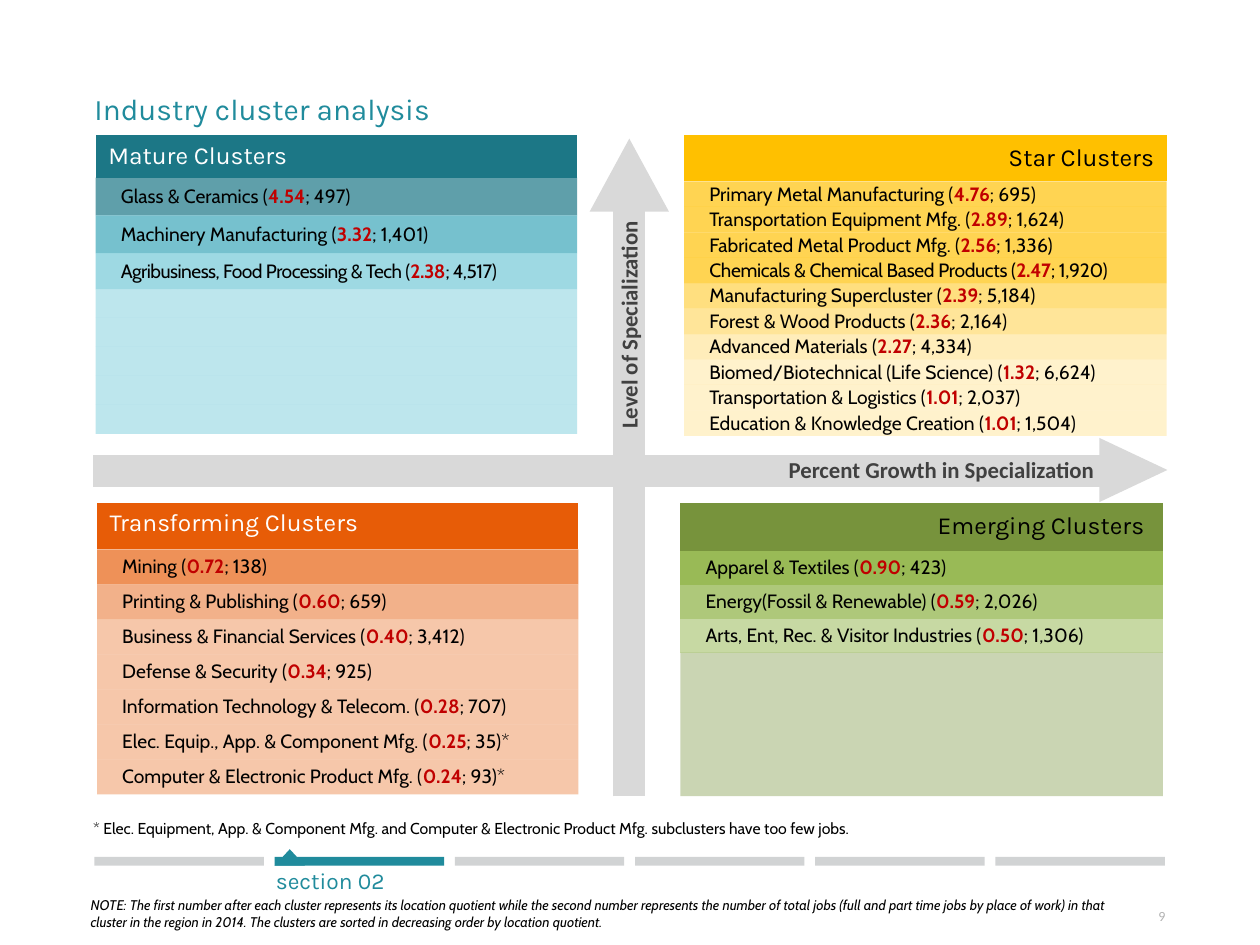
from lxml.etree import SubElement
from pptx import Presentation
from pptx.dml.color import RGBColor
from pptx.enum.shapes import MSO_CONNECTOR as Connector, MSO_SHAPE as Shape
from pptx.enum.text import MSO_ANCHOR as Anchor, PP_ALIGN as Align
from pptx.oxml.ns import qn
from pptx.util import Inches, Pt

BLACK = RGBColor(0x00, 0x00, 0x00)
WHITE = RGBColor(0xFF, 0xFF, 0xFF)
RED = RGBColor(0xC0, 0x00, 0x00)
TEAL = RGBColor(0x20, 0x8B, 0x9C)
DEEP_TEAL = RGBColor(0x1C, 0x77, 0x86)
MID_TEAL = RGBColor(0x3C, 0xA8, 0xBA)
SOFT_TEAL = RGBColor(0x76, 0xCA, 0xD8)
PALE_TEAL = RGBColor(0xA2, 0xDC, 0xE6)
GOLD = RGBColor(0xFF, 0xC0, 0x00)
ORANGE = RGBColor(0xE7, 0x5C, 0x07)
SOFT_ORANGE = RGBColor(0xED, 0x8C, 0x51)
OLIVE = RGBColor(0x77, 0x93, 0x3C)
GREEN = RGBColor(0x99, 0xBA, 0x56)
MID_GREEN = RGBColor(0xAE, 0xC8, 0x7A)
PALE_GREEN = RGBColor(0xC7, 0xD9, 0xA3)
AXIS_GRAY = RGBColor(0xD9, 0xD9, 0xD9)
BAR_GRAY = RGBColor(0xD1, 0xD3, 0xD4)
LABEL_GRAY = RGBColor(0x40, 0x40, 0x40)
NUMBER_GRAY = RGBColor(0xB2, 0xB2, 0xB2)

NO_GRID_STYLE = "{2D5ABB26-0587-4C30-8999-92F81FD0307C}"

# Clusters: name, location quotient, jobs, letter spacing in points.
# Fills: colour, opacity in percent. Heights: header first, then each row.
QUADRANTS = [
    {"title": "Mature Clusters", "at": (0.76, 1.07), "width": 3.82,
     "title_color": WHITE, "title_fill": DEEP_TEAL, "align": Align.LEFT,
     "pad": 0.05, "right": 0.1,
     "heights": [0.34, 0.3, 0.3, 0.28] + [0.23] * 5,
     "clusters": [
         ("Glass & Ceramics", "4.54", "; 497)", 0),
         ("Machinery Manufacturing", "3.32", "; 1,401)", 0),
         ("Agribusiness, Food Processing & Tech", "2.38", "; 4,517)", -0.3)],
     "fills": [(DEEP_TEAL, 70), (MID_TEAL, 70), (SOFT_TEAL, 70)] + [(PALE_TEAL, 70)] * 5},
    {"title": "Star Clusters", "at": (5.43, 1.07), "width": 3.83,
     "title_color": BLACK, "title_fill": GOLD, "align": Align.RIGHT,
     "pad": 0, "right": 0.05,
     "heights": [0.37] + [0.202] * 10,
     "clusters": [
         ("Primary Metal Manufacturing", "4.76", "; 695)", 0),
         ("Transportation Equipment Mfg.", "2.89", "; 1,624)", 0),
         ("Fabricated Metal Product Mfg.", "2.56", "; 1,336)", 0),
         ("Chemicals & Chemical Based Products", "2.47", "; 1,920)", -0.2),
         ("Manufacturing Supercluster", "2.39", "; 5,184)", 0),
         ("Forest & Wood Products", "2.36", "; 2,164)", 0),
         ("Advanced Materials", "2.27", "; 4,334)", 0),
         ("Biomed/Biotechnical (Life Science)", "1.32", "; 6,624)", 0),
         ("Transportation & Logistics", "1.01", "; 2,037)", 0),
         ("Education & Knowledge Creation", "1.01", "; 1,504)", 0)],
     "fills": [(GOLD, share) for share in (68, 68, 68, 68, 50, 40, 27, 20, 20, 20)]},
    {"title": "Emerging Clusters ", "at": (5.4, 3.99), "width": 3.83,
     "title_color": BLACK, "title_fill": OLIVE, "align": Align.RIGHT,
     "pad": 0, "right": 0.1,
     "heights": [0.38, 0.27, 0.27, 0.27, 1.14],
     "clusters": [
         ("Apparel & Textiles", "0.90", "; 423)", 0),
         ("Energy(Fossil & Renewable)", "0.59", "; 2,026)", 0),
         ("Arts, Ent, Rec. & Visitor Industries", "0.50", "; 1,306)", 0)],
     "fills": [(GREEN, 100), (MID_GREEN, 100), (PALE_GREEN, 100), (OLIVE, 39)]},
    {"title": "Transforming Clusters", "at": (0.77, 3.99), "width": 3.82,
     "title_color": WHITE, "title_fill": ORANGE, "align": Align.LEFT,
     "title_anchor": Anchor.TOP, "pad": 0.02, "right": 0.05,
     "heights": [0.37] + [0.278] * 7,
     "clusters": [
         ("Mining", "0.72", "; 138)", 0),
         ("Printing & Publishing", "0.60", "; 659)", 0),
         ("Business & Financial Services", "0.40", "; 3,412)", 0),
         ("Defense & Security", "0.34", "; 925)", 0),
         ("Information Technology & Telecom.", "0.28", "; 707)", 0),
         ("Elec. Equip., App. & Component Mfg.", "0.25", "; 35)*", 0),
         ("Computer & Electronic Product Mfg.", "0.24", "; 93)*", 0)],
     "fills": [(ORANGE, 67), (SOFT_ORANGE, 67)] + [(ORANGE, 34)] * 5},
]

FLUSH = (0, 0, 0, 0)
PADDED = (0.1, 0.05, 0.1, 0.05)
AXIS_FONT = {"name": "Calibri", "size": 13, "color": LABEL_GRAY, "bold": True}
AXIS_LABELS = [
    ("Percent Growth in Specialization ", (4.59, 3.57, 4.23, 0.32), PADDED, AXIS_FONT,
     {"align": Align.RIGHT}),
    ("Level of Specialization", (3.74, 2.42, 2.5, 0.32), PADDED, AXIS_FONT,
     {"align": Align.CENTER, "rotation": 270}),
]
TEXTS = [
    ("9", (8.93, 7.21, 0.32, 0.13), FLUSH,
     {"name": "Calibri", "size": 8, "color": NUMBER_GRAY},
     {"align": Align.RIGHT, "anchor": Anchor.BOTTOM}),
    ("Industry cluster analysis", (0.75, 0.76, 8.5, 0.49), FLUSH,
     {"name": "Karla", "size": 17, "color": TEAL}, {"spacing": 0.85}),
    ("section 02", (2.19, 6.88, 1.34, 0.22), FLUSH,
     {"name": "Karla", "size": 13, "color": TEAL}, {}),
    ("NOTE: The first number after each cluster represents its location quotient while the "
     "second number represents the number of total jobs (full and part time jobs by place of "
     "work) in that cluster in the region in 2014. The clusters are sorted in decreasing order "
     "by location quotient.", (0.62, 7.07, 8.58, 0.37), PADDED,
     {"name": "Cabin", "size": 8, "color": BLACK, "italic": True}, {}),
    ("* Elec. Equipment, App. & Component Mfg. and Computer & Electronic Product Mfg. "
     "subclusters have too few jobs.", (0.64, 6.45, 6.51, 0.25), PADDED,
     {"name": "Cabin", "size": 9, "color": BLACK}, {"wrap": False}),
]
AXES = [((0.74, 3.735), (8.78, 3.735)), ((4.99, 6.32), (4.99, 1.45))]
ARROWHEADS = [((8.74, 3.46, 0.51, 0.54), 90), ((4.68, 1.1, 0.63, 0.58), 0)]
SECTIONS, ACTIVE_SECTION = 6, 1
BAR_LEFT, BAR_TOP, BAR_WIDTH, BAR_HEIGHT, BAR_PITCH = 0.75, 6.8, 1.345, 0.07, 1.43


def add_span(para, text, font, tracking=0):
    span = para.add_run()
    span.text = text
    for key, value in font.items():
        if key == "color":
            span.font.color.rgb = value
        else:
            setattr(span.font, key, Pt(value) if key == "size" else value)
    if tracking:
        span.font._element.set("spc", str(round(tracking * 100)))


def set_margins(target, margins):
    for side, value in zip(("left", "top", "right", "bottom"), margins):
        setattr(target, f"margin_{side}", Inches(value))


def add_text(page, text, at, margins, font, layout):
    box = page.shapes.add_textbox(*map(Inches, at))
    box.rotation = layout.get("rotation", 0)
    frame = box.text_frame
    frame.word_wrap = layout.get("wrap", True)
    frame.vertical_anchor = layout.get("anchor", Anchor.TOP)
    set_margins(frame, margins)
    para = frame.paragraphs[0]
    para.alignment = layout.get("align", Align.LEFT)
    para.line_spacing = layout.get("spacing", 1.0)
    add_span(para, text, font)


def paint(shape, color):
    shape.shadow.inherit = False
    shape.fill.solid()
    shape.fill.fore_color.rgb = color
    shape.line.fill.background()


def add_axis(page, start, end):
    axis = page.shapes.add_connector(Connector.STRAIGHT, *map(Inches, start + end))
    axis.line.color.rgb = AXIS_GRAY
    axis.line.width = Pt(18.25)
    SubElement(axis._element.spPr, qn("a:effectLst"))


def fill_cell(cell, color, opacity=100):
    cell.fill.solid()
    cell.fill.fore_color.rgb = color
    if opacity < 100:
        tint = cell._tc.tcPr.find(".//" + qn("a:srgbClr"))
        SubElement(tint, qn("a:alpha"), val=str(opacity * 1000))


def add_quadrant(page, quadrant):
    heights, pad = quadrant["heights"], quadrant["pad"]
    area = (*quadrant["at"], quadrant["width"], sum(heights))
    table = page.shapes.add_table(len(heights), 1, *map(Inches, area)).table
    table.first_row = table.horz_banding = False
    table._tbl.tblPr.find(qn("a:tableStyleId")).text = NO_GRID_STYLE
    for row, height in zip(table.rows, heights):
        row.height = Inches(height)

    header, *cells = [row.cells[0] for row in table.rows]
    header.vertical_anchor = quadrant.get("title_anchor", Anchor.MIDDLE)
    set_margins(header, PADDED)
    fill_cell(header, quadrant["title_fill"])
    para = header.text_frame.paragraphs[0]
    para.alignment = quadrant["align"]
    add_span(para, quadrant["title"],
             {"name": "Karla", "size": 14, "color": quadrant["title_color"]})

    plain = {"name": "Cabin", "size": 11, "color": BLACK}
    for cell, fill in zip(cells, quadrant["fills"]):
        cell.vertical_anchor = Anchor.MIDDLE
        set_margins(cell, (0.2, pad, quadrant["right"], pad))
        fill_cell(cell, *fill)
    for cell, (name, quotient, jobs, tracking) in zip(cells, quadrant["clusters"]):
        para = cell.text_frame.paragraphs[0]
        add_span(para, f"{name} (", plain, tracking)
        add_span(para, quotient, {**plain, "color": RED, "bold": True}, tracking)
        add_span(para, jobs, plain, tracking)
    for cell in cells[len(quadrant["clusters"]):]:
        # A small empty line keeps the row at its set height.
        SubElement(cell.text_frame.paragraphs[0]._p, qn("a:endParaRPr"), sz="600")


def add_progress(page):
    for index in range(SECTIONS):
        at = (BAR_LEFT + index * BAR_PITCH, BAR_TOP, BAR_WIDTH, BAR_HEIGHT)
        bar = page.shapes.add_shape(Shape.RECTANGLE, *map(Inches, at))
        paint(bar, TEAL if index == ACTIVE_SECTION else BAR_GRAY)
    left = BAR_LEFT + ACTIVE_SECTION * BAR_PITCH
    pointer = page.shapes.add_shape(Shape.ISOSCELES_TRIANGLE,
                                    *map(Inches, (left, 6.74, 0.24, 0.13)))
    paint(pointer, TEAL)


def main():
    deck = Presentation()
    deck.slide_width, deck.slide_height = Inches(10), Inches(7.5)
    page = deck.slides.add_slide(deck.slide_layouts[6])
    add_progress(page)
    for start, end in AXES:
        add_axis(page, start, end)
    for at, rotation in ARROWHEADS:
        head = page.shapes.add_shape(Shape.ISOSCELES_TRIANGLE, *map(Inches, at))
        head.rotation = rotation
        paint(head, AXIS_GRAY)
    for entry in AXIS_LABELS + TEXTS:
        add_text(page, *entry)
    for quadrant in QUADRANTS:
        add_quadrant(page, quadrant)
    deck.save("out.pptx")


if __name__ == "__main__":
    main()
